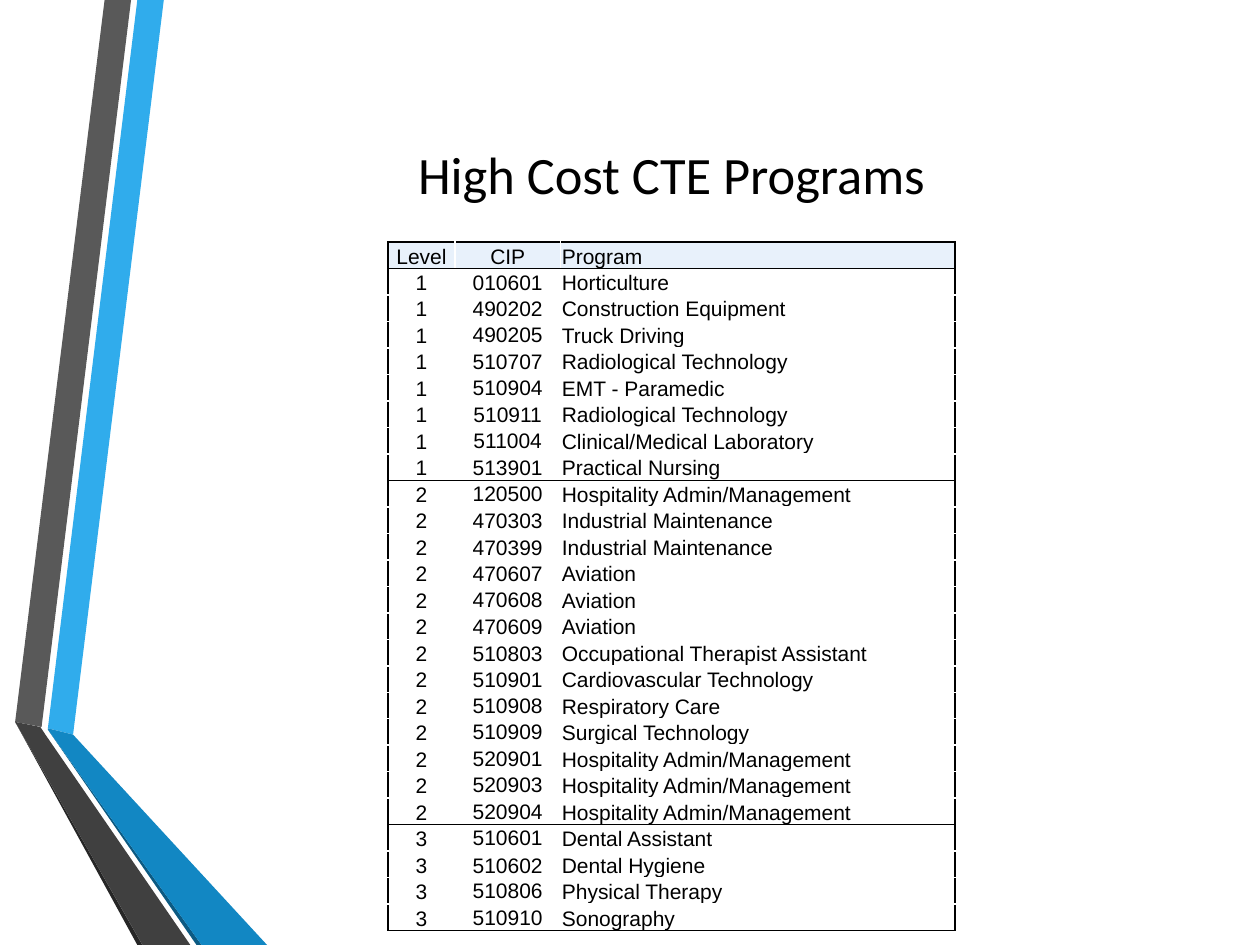
from dataclasses import dataclass

from lxml import etree
from pptx import Presentation
from pptx import util as u
from pptx.dml.color import RGBColor
from pptx.enum import text as t
from pptx.oxml import ns
from pptx.table import _Cell as Cell

BLACK, WHITE, HEAD = "000000", "FFFFFF", "E8F1FB"
MID, LOW = t.MSO_ANCHOR.MIDDLE, t.MSO_ANCHOR.BOTTOM


@dataclass
class Band:
    color: str
    points: list[tuple[float, float]]


@dataclass
class Row:
    level: str
    cip: str
    name: str
    anchor: t.MSO_ANCHOR = MID


BANDS = [
    Band("30ACEC", [(0.38, 5.78), (0.58, 5.83), (1.3, 0), (1.09, 0)]),
    Band("595959", [(1.04, 0), (0.83, 0), (0.12, 5.73), (0.33, 5.77)]),
    Band("262626", [(0.12, 5.73), (1.09, 7.5), (1.13, 7.5)]),
    Band("0C5A82", [(0.38, 5.79), (1.56, 7.5), (1.6, 7.5)]),
    Band("1287C3", [(0.38, 5.79), (1.6, 7.5), (2.12, 7.5), (0.58, 5.83), (0.38, 5.78)]),
    Band("404040", [(1.51, 7.5), (0.36, 5.83), (0.32, 5.77), (0.12, 5.73), (1.13, 7.5)]),
]

ROWS = [
    Row("Level", "CIP", "Program", LOW),
    Row("1", "010601", "Horticulture", LOW),
    Row("1", "490202", "Construction Equipment", LOW),
    Row("1", "490205", "Truck Driving"),
    Row("1", "510707", "Radiological Technology"),
    Row("1", "510904", "EMT - Paramedic"),
    Row("1", "510911", "Radiological Technology"),
    Row("1", "511004", "Clinical/Medical Laboratory"),
    Row("1", "513901", "Practical Nursing"),
    Row("2", "120500", "Hospitality Admin/Management"),
    Row("2", "470303", "Industrial Maintenance"),
    Row("2", "470399", "Industrial Maintenance", LOW),
    Row("2", "470607", "Aviation"),
    Row("2", "470608", "Aviation"),
    Row("2", "470609", "Aviation"),
    Row("2", "510803", "Occupational Therapist Assistant", LOW),
    Row("2", "510901", "Cardiovascular Technology", LOW),
    Row("2", "510908", "Respiratory Care"),
    Row("2", "510909", "Surgical Technology"),
    Row("2", "520901", "Hospitality Admin/Management"),
    Row("2", "520903", "Hospitality Admin/Management"),
    Row("2", "520904", "Hospitality Admin/Management"),
    Row("3", "510601", "Dental Assistant"),
    Row("3", "510602", "Dental Hygiene", LOW),
    Row("3", "510806", "Physical Therapy"),
    Row("3", "510910", "Sonography"),
]
COLS = [0.53, 0.84, 3.13]


def rgb(code: str) -> RGBColor:
    return RGBColor.from_string(code)


def style(para, face: str, size: float, center: bool) -> None:
    para.alignment = t.PP_ALIGN.CENTER if center else t.PP_ALIGN.LEFT
    para.font.name = face
    para.font.size = u.Pt(size)
    para.font.color.rgb = rgb(BLACK)


def draw_band(slide, band: Band) -> None:
    spots = [(u.Inches(x), u.Inches(y)) for x, y in band.points]
    pen = slide.shapes.build_freeform(*spots[0])
    pen.add_line_segments(spots[1:], close=True)
    shape = pen.convert_to_shape()
    shape.shadow.inherit = False
    shape.fill.solid()
    shape.fill.fore_color.rgb = rgb(band.color)
    shape.line.fill.background()


def draw_title(slide, words: str) -> None:
    box = slide.shapes.add_textbox(
        u.Inches(1.22), u.Inches(0.75), u.Inches(8.22), u.Inches(1.25))
    frame = box.text_frame
    frame.word_wrap = True
    frame.vertical_anchor = MID
    frame.text = words
    style(frame.paragraphs[0], "Calibri", 30, True)


def set_edges(cell: Cell, dark: dict[str, bool]) -> None:
    """Draw each side black where dark, else white."""
    props = cell._tc.get_or_add_tcPr()
    for i, (side, on) in enumerate(dark.items()):
        line = etree.Element(ns.qn(f"a:ln{side}"), w=str(u.Pt(1)))
        fill = etree.SubElement(line, ns.qn("a:solidFill"))
        etree.SubElement(fill, ns.qn("a:srgbClr"), val=BLACK if on else WHITE)
        props.insert(i, line)


def fill_cell(cell: Cell, words: str, center: bool, anchor: t.MSO_ANCHOR) -> None:
    cell.text = words
    style(cell.text_frame.paragraphs[0], "Arial", 12, center)
    cell.vertical_anchor = anchor
    cell.margin_left = cell.margin_right = cell.margin_top = u.Inches(0.01)
    cell.margin_bottom = 0


def draw_table(slide, rows: list[Row]) -> None:
    tall = 5.42
    table = slide.shapes.add_table(
        len(rows), len(COLS), u.Inches(3.08), u.Inches(1.92),
        u.Inches(sum(COLS)), u.Inches(tall)).table
    table.first_row = table.horz_banding = False
    for col, wide in zip(table.columns, COLS):
        col.width = u.Inches(wide)
    last = len(COLS) - 1
    for r, row in enumerate(rows):
        table.rows[r].height = u.Inches(tall / len(rows))
        top = r == 0 or rows[r - 1].level != row.level
        base = r == len(rows) - 1 or rows[r + 1].level != row.level
        for c, words in enumerate((row.level, row.cip, row.name)):
            cell = table.cell(r, c)
            fill_cell(cell, words, c < last, row.anchor if c == 1 else LOW)
            if r == 0:
                cell.fill.solid()
                cell.fill.fore_color.rgb = rgb(HEAD)
            else:
                cell.fill.background()
            set_edges(cell, {"L": c == 0, "R": c == last, "T": top, "B": base})


def main() -> None:
    deck = Presentation()
    deck.slide_width, deck.slide_height = u.Inches(10), u.Inches(7.5)
    slide = deck.slides.add_slide(deck.slide_layouts[6])
    for band in BANDS:
        draw_band(slide, band)
    draw_title(slide, "High Cost CTE Programs")
    draw_table(slide, ROWS)
    deck.save("out.pptx")


if __name__ == "__main__":
    main()
